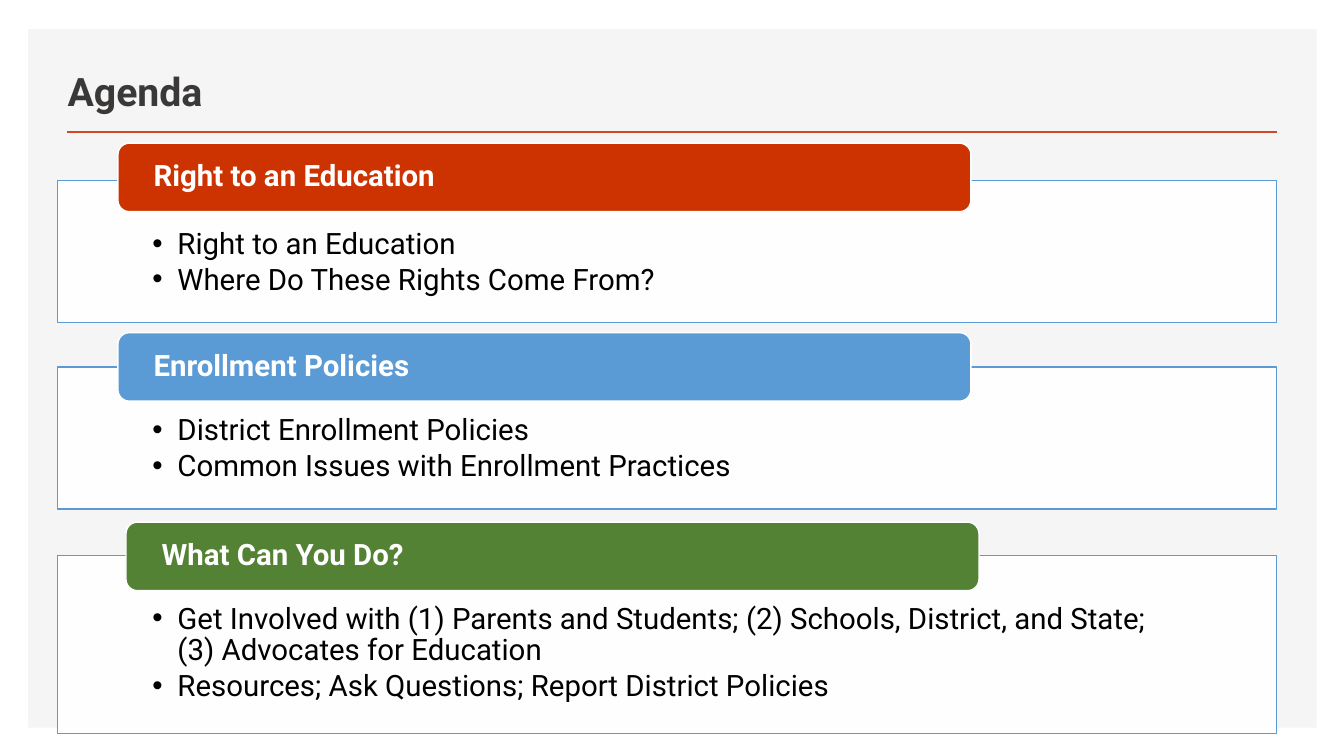
from dataclasses import dataclass

from lxml import etree
from pptx import Presentation
from pptx import util as u
from pptx.dml.color import RGBColor
from pptx.enum import shapes, text
from pptx.oxml import ns

# Content: heading, colour name, header (left, top), body (top, height), bullets
TITLE = "Agenda"
SECTIONS = [
    ("Right to an Education", "red", (1.17, 1.42), (1.79, 1.41),
     ["Right to an Education", "Where Do These Rights Come From?"]),
    ("Enrollment Policies", "blue", (1.17, 3.3), (3.64, 1.41),
     ["District Enrollment Policies",
      "Common Issues with Enrollment Practices"]),
    ("What Can You Do?", "green", (1.25, 5.18), (5.51, 1.77),
     ["Get Involved with (1) Parents and Students; (2) Schools, District, "
      "and State; (3) Advocates for Education",
      "Resources; Ask Questions; Report District Policies"]),
]


@dataclass(frozen=True)
class Theme:
    font: str = "Roboto"
    title_size: int = 28
    text_size: int = 21
    title: str = "3B3838"
    ink: str = "000000"
    white: str = "FFFFFF"
    backdrop: str = "F5F5F5"
    rule: str = "D24726"
    red: str = "CC3300"
    blue: str = "5B9BD5"
    green: str = "548235"


THEME = Theme()
BODY_LEFT, BODY_WIDTH = 0.57, 12.09
HEADER_WIDTH, HEADER_HEIGHT = 8.46, 0.68


def add_block(page, kind, place, fill, line=None):
    box = page.shapes.add_shape(kind, *map(u.Inches, place))
    box.shadow.inherit = False
    box.fill.solid()
    box.fill.fore_color.rgb = RGBColor.from_string(fill)
    if line:
        box.line.color.rgb = RGBColor.from_string(line)
        box.line.width = u.Pt(1)
    else:
        box.line.fill.background()
    return box


def set_frame(box, anchor, left, top, right, bottom):
    frame = box.text_frame
    frame.word_wrap = True
    frame.vertical_anchor = anchor
    frame.margin_left, frame.margin_top = u.Inches(left), u.Inches(top)
    frame.margin_right, frame.margin_bottom = u.Inches(right), u.Inches(bottom)
    return frame


def style(para, size, color, bold=False):
    para.alignment = text.PP_ALIGN.LEFT
    para.line_spacing = 0.9
    for span in para.runs:
        span.font.name = THEME.font
        span.font.size = u.Pt(size)
        span.font.bold = bold
        span.font.color.rgb = RGBColor.from_string(color)


def add_bullet(para):
    para.space_after = u.Pt(3)
    props = para._p.get_or_add_pPr()
    props.set("marL", str(u.Inches(0.25)))
    props.set("indent", str(-u.Inches(0.25)))
    etree.SubElement(props, ns.qn("a:buFont"), typeface="Arial")
    etree.SubElement(props, ns.qn("a:buChar"), char="•")


def add_body(page, top, height, bullets):
    box = add_block(page, shapes.MSO_SHAPE.RECTANGLE,
                    (BODY_LEFT, top, BODY_WIDTH, height),
                    THEME.white, THEME.blue)
    color = box.fill._xPr.find(".//" + ns.qn("a:srgbClr"))
    etree.SubElement(color, ns.qn("a:alpha"), val="90000")
    frame = set_frame(box, text.MSO_ANCHOR.TOP, 0.94, 0.48, 0.94, 0.16)
    frame.text = "\n".join(bullets)
    for para in frame.paragraphs:
        style(para, THEME.text_size, THEME.ink)
        add_bullet(para)


def add_header(page, left, top, heading, fill):
    box = add_block(page, shapes.MSO_SHAPE.ROUNDED_RECTANGLE,
                    (left, top, HEADER_WIDTH, HEADER_HEIGHT),
                    fill, THEME.white)
    frame = set_frame(box, text.MSO_ANCHOR.MIDDLE, 0.32, 0, 0.32, 0)
    frame.text = heading
    style(frame.paragraphs[0], THEME.text_size, THEME.white, bold=True)


def main():
    deck = Presentation()
    deck.slide_width, deck.slide_height = u.Inches(13.33), u.Inches(7.5)
    page = deck.slides.add_slide(deck.slide_layouts[5])

    # Backdrop and rule
    add_block(page, shapes.MSO_SHAPE.RECTANGLE, (0.28, 0.29, 12.78, 6.93),
              THEME.backdrop)
    rule = page.shapes.add_connector(
        shapes.MSO_CONNECTOR.STRAIGHT,
        *map(u.Inches, (0.66, 1.31, 12.67, 1.31)))
    rule.line.color.rgb = RGBColor.from_string(THEME.rule)
    rule.line.width = u.Pt(2)
    etree.SubElement(rule._element.spPr, ns.qn("a:effectLst"))

    # Title, raised above the backdrop
    title = page.shapes.title
    title.left, title.top = u.Inches(0.57), u.Inches(0.49)
    title.width, title.height = u.Inches(6.69), u.Inches(0.7)
    frame = set_frame(title, text.MSO_ANCHOR.BOTTOM, 0.1, 0.05, 0.1, 0.05)
    frame.text = TITLE
    style(frame.paragraphs[0], THEME.title_size, THEME.title, bold=True)
    page.shapes._spTree.append(title._element)

    # Agenda sections
    for heading, color, corner, band, bullets in SECTIONS:
        add_body(page, *band, bullets)
        add_header(page, *corner, heading, getattr(THEME, color))

    deck.save("out.pptx")


if __name__ == "__main__":
    main()
